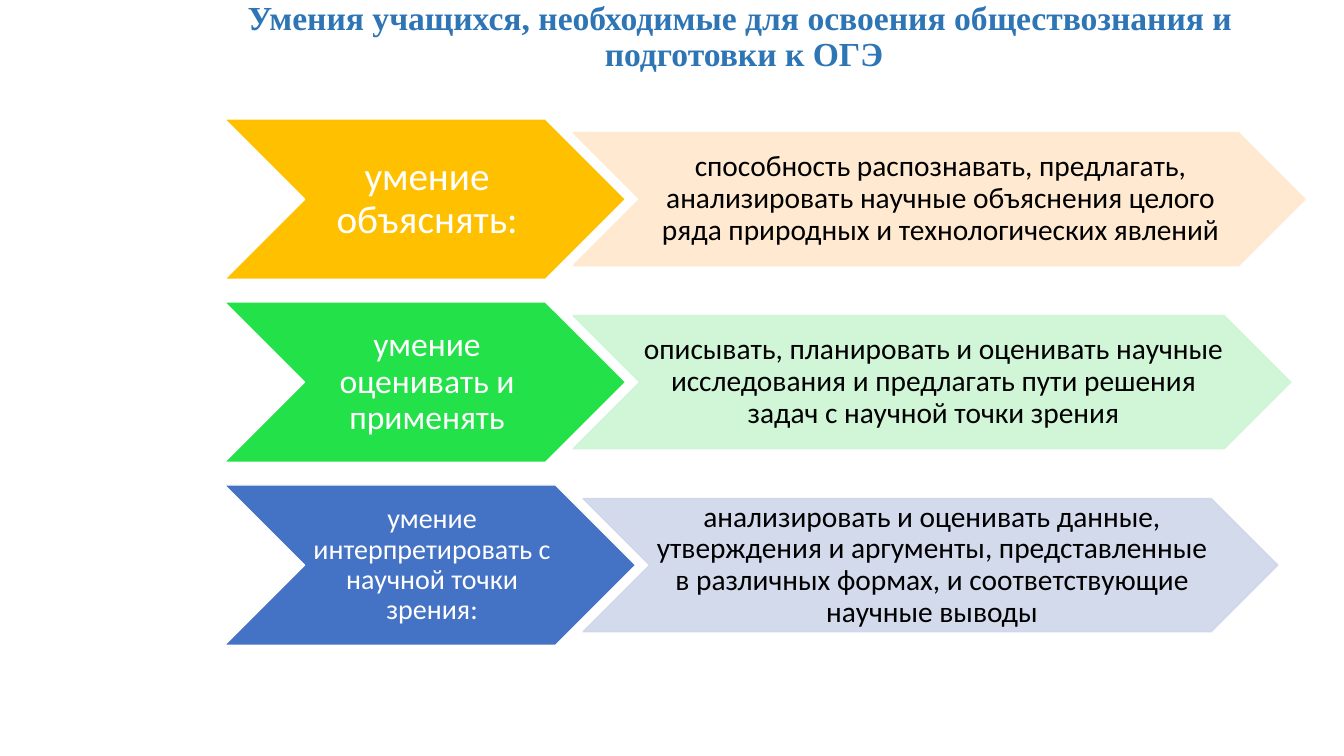
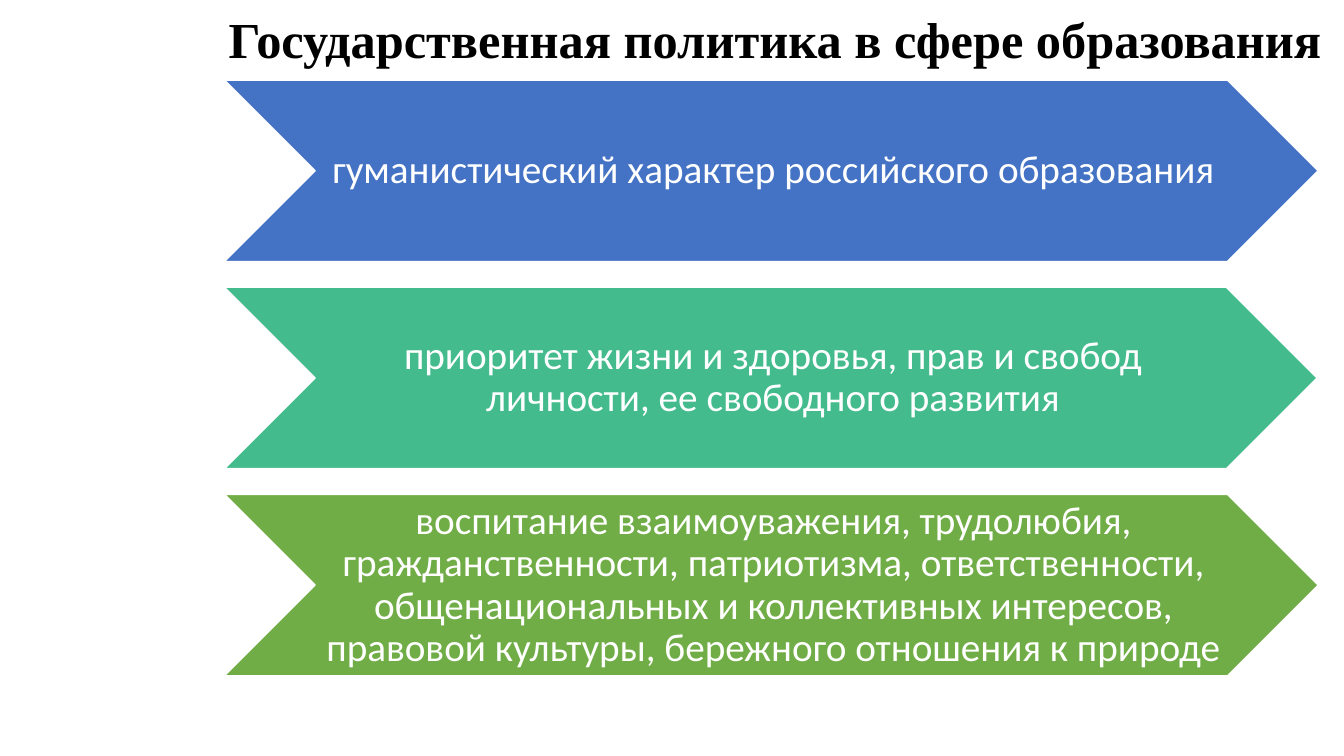
from lxml import etree
from pptx import Presentation
from pptx import util as u
from pptx.dml.color import RGBColor
from pptx.enum import shapes, text
from pptx.oxml.ns import qn

deck = Presentation()
deck.slide_width, deck.slide_height = u.Inches(13.333), u.Inches(7.5)
blank = deck.slide_layouts[6]

# Shared style; places are percent of the slide's width and height
WHITE, BLACK, BLUE = "FFFFFF", "000000", "4472C4"
TITLE = dict(font="Times New Roman", bold=True, insets=(0.1, 0.05, 0.1, 0.05))
LEFT = 16.7


def paint(fill, colour):
    fill.solid()
    fill.fore_color.rgb = RGBColor.from_string(colour)


def write(slide, words, place, *, size, colour, font="Calibri", bold=False,
          align="CENTER", insets=(0.04, 0.02, 0, 0.02),
          fill=None, line=WHITE, opacity=None):
    """Put words in a chevron when a fill is given, otherwise in a plain box."""
    x, y, width, height = place
    spot = (int(deck.slide_width * x / 100), int(deck.slide_height * y / 100),
            int(deck.slide_width * width / 100), int(deck.slide_height * height / 100))
    if fill:
        holder = slide.shapes.add_shape(shapes.MSO_SHAPE.CHEVRON, *spot)
        holder.shadow.inherit = False
        paint(holder.fill, fill)
        paint(holder.line.fill, line)
        holder.line.width = u.Pt(1)
        if opacity:
            for tint in holder.element.spPr.iter(qn("a:srgbClr")):
                etree.SubElement(tint, qn("a:alpha")).set("val", str(opacity * 1000))
    else:
        holder = slide.shapes.add_textbox(*spot)
    frame = holder.text_frame
    frame.word_wrap = True
    frame.vertical_anchor = text.MSO_ANCHOR.MIDDLE
    (frame.margin_left, frame.margin_top,
     frame.margin_right, frame.margin_bottom) = map(u.Inches, insets)
    frame.text = words
    paragraph = frame.paragraphs[0]
    paragraph.alignment = text.PP_ALIGN[align]
    paragraph.line_spacing = 0.9
    for run in paragraph.runs:
        run.font.name, run.font.size, run.font.bold = font, u.Pt(size), bold
        paint(run.font.fill, colour)


# Slide 1: each skill with its explanation
skills_slide = deck.slides.add_slide(blank)
write(skills_slide,
      "Умения учащихся, необходимые для освоения обществознания и \vподготовки к ОГЭ",
      (15.08, -1.73, 80.55, 13.33), size=24, colour="2E75B6", **TITLE)

skills = [
    ("умение объяснять:", 28, "FFC000", 29.85,
     "способность распознавать, предлагать, анализировать научные объяснения "
     "целого ряда природных и технологических явлений", "FFE8CC", 54.45),
    ("умение оценивать и применять", 24, "23E148", 29.85,
     "описывать, планировать и оценивать научные исследования и предлагать "
     "пути решения задач с научной точки зрения", "CCF6D3", 53.4),
    ("умение интерпретировать с научной точки зрения:", 20, BLUE, 30.6,
     "анализировать и оценивать данные, утверждения и аргументы, представленные "
     "в различных формах, и соответствующие научные выводы", "CFD6EA", 51.68),
]
SKILL_TOP, SKILL_PITCH, SKILL_HEIGHT = 15.75, 24.2, 21.2
DETAIL_HEIGHT, OVERLAP = 17.6, 3.9
for row, (skill, size, strong, width, detail, pale, detail_width) in enumerate(skills):
    top = SKILL_TOP + row * SKILL_PITCH
    write(skills_slide, skill, (LEFT, top, width, SKILL_HEIGHT),
          size=size, colour=WHITE, fill=strong)
    write(skills_slide, detail,
          (LEFT + width - OVERLAP, top + (SKILL_HEIGHT - DETAIL_HEIGHT) / 2,
           detail_width, DETAIL_HEIGHT),
          size=21, colour=BLACK, insets=(0.03, 0.01, 0, 0.01),
          fill=pale, line=pale, opacity=90)

# Slide 2: principles of education policy
policy_slide = deck.slides.add_slide(blank)
write(policy_slide, "Государственная политика в сфере образования",
      (16.28, 2.53, 83.7, 6), size=36, colour=BLACK, align="LEFT", **TITLE)

principles = [
    ("гуманистический характер российского образования", BLUE, 81.38),
    ("приоритет жизни и здоровья, прав и свобод личности, ее свободного развития",
     "43BB8D", 81.3),
    ("воспитание взаимоуважения, трудолюбия, гражданственности, патриотизма, "
     "ответственности, общенациональных и коллективных интересов, правовой "
     "культуры, бережного отношения к природе", "70AD47", 81.38),
]
POLICY_TOP, POLICY_PITCH, POLICY_HEIGHT = 10.6, 27.4, 24
for row, (principle, strong, width) in enumerate(principles):
    write(policy_slide, principle,
          (LEFT, POLICY_TOP + row * POLICY_PITCH, width, POLICY_HEIGHT),
          size=28, colour=WHITE, fill=strong)

deck.save("out.pptx")
